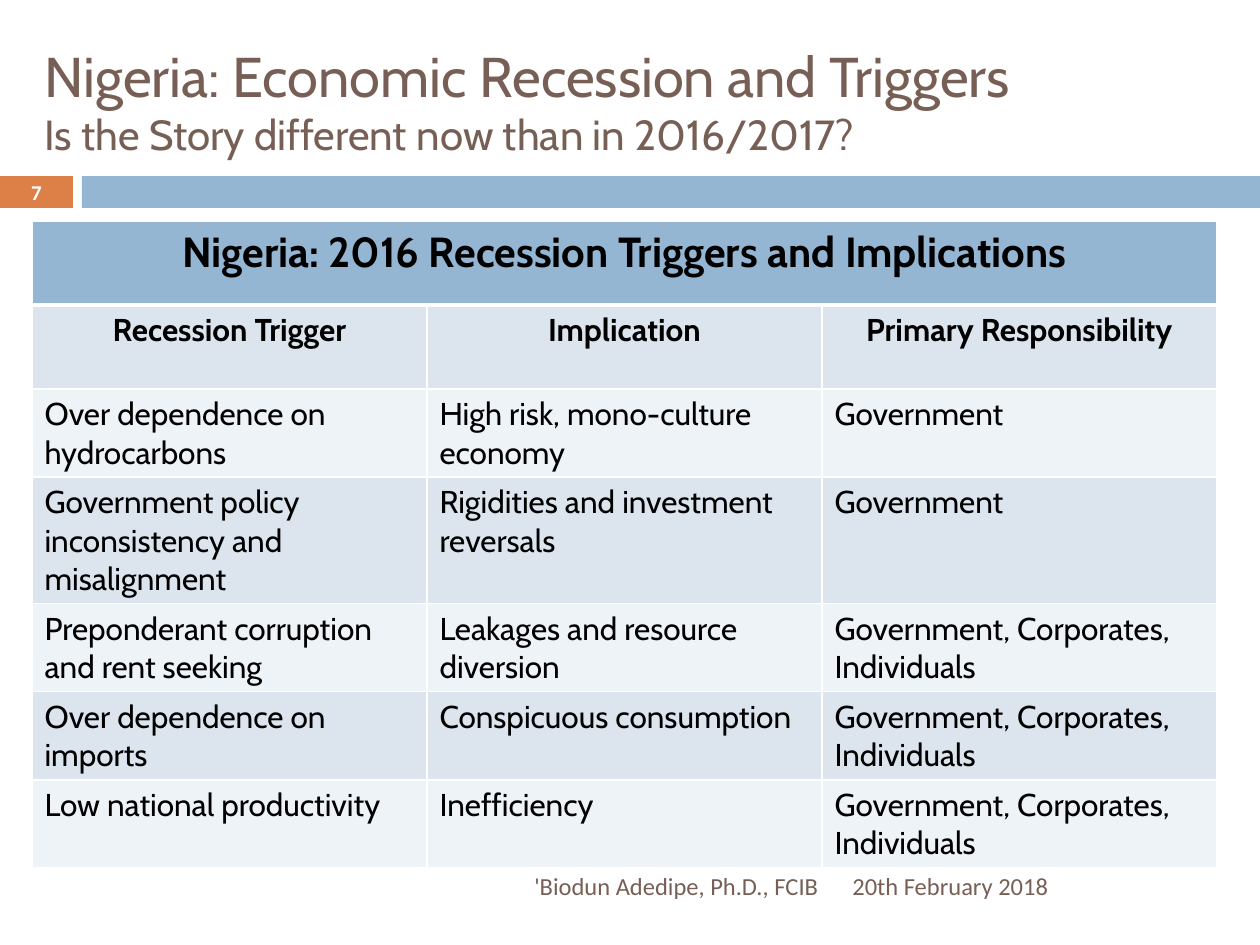
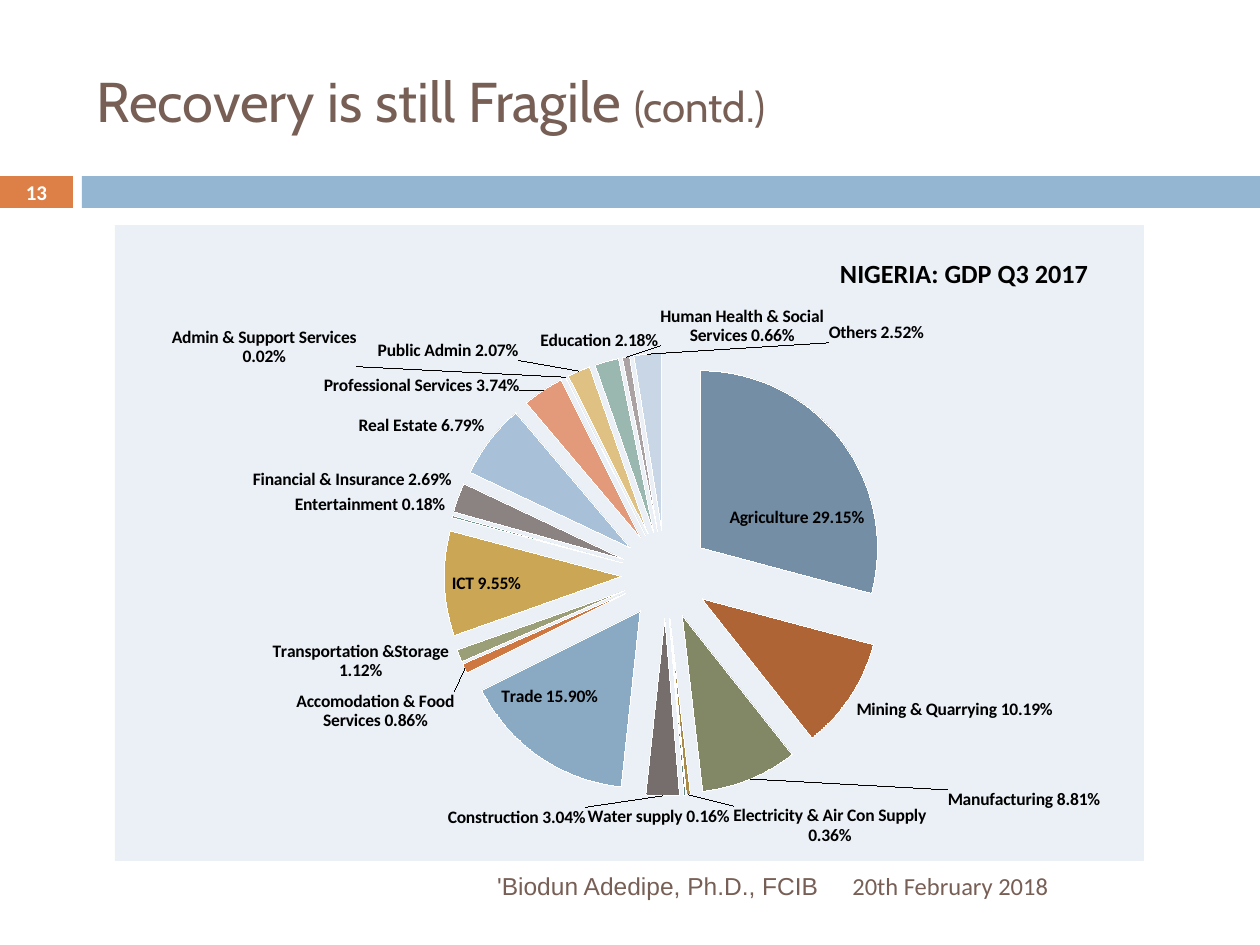
from pptx import Presentation
from pptx.chart.data import CategoryChartData
from pptx.dml.color import RGBColor
from pptx.enum.chart import XL_CHART_TYPE
from pptx.enum.shapes import MSO_SHAPE
from pptx.enum.text import MSO_ANCHOR, PP_ALIGN
from pptx.oxml import parse_xml
from pptx.util import Emu, Pt

PIE = XL_CHART_TYPE.PIE
RECT = MSO_SHAPE.RECTANGLE
MIDDLE = MSO_ANCHOR.MIDDLE
LEFT, CENTER, RIGHT = PP_ALIGN.LEFT, PP_ALIGN.CENTER, PP_ALIGN.RIGHT
A_NS = 'xmlns:a="http://schemas.openxmlformats.org/drawingml/2006/main"'
C_NS = 'xmlns:c="http://schemas.openxmlformats.org/drawingml/2006/chart"'
SCALE = 914400 / 126

HEX = {
    "brown": "775F55", "orange": "DD8047", "blue": "94B6D2",
    "white": "FFFFFF", "black": "000000",
    "dark": "DCE5EE", "light": "EEF3F7", "panel": "EAF0F6",
}
RGB = {name: RGBColor.from_string(code) for name, code in HEX.items()}


def px(*sizes):
    return [Emu(round(size * SCALE)) for size in sizes]


def write(slide, box, lines, face, color, align=LEFT, bold=False):
    frame = slide.shapes.add_textbox(*px(*box)).text_frame
    frame.word_wrap = True
    frame.vertical_anchor = MIDDLE
    para = frame.paragraphs[0]
    para.alignment = align
    for text, size in lines:
        if text == "\n":
            para.add_line_break()
            continue
        run = para.add_run()
        run.text = text
        run.font.size = Pt(size)
        run.font.name = face
        run.font.bold = bold
        run.font.color.rgb = RGB[color]


deck = Presentation()
deck.slide_width, deck.slide_height = px(1260, 945)

PAGES = [
    ("7", (32, 32, 1124, 136), "Calibri", [
        ("Nigeria: Economic Recession and Triggers", 32),
        ("\n", 0),
        ("Is the Story different now than in 2016/2017?", 24),
    ]),
    ("13", (84, 53, 1124, 94), "Arial", [
        ("Recovery is still Fragile ", 32),
        ("(contd.)", 24),
    ]),
]
slides = []
for number, box, face, title in PAGES:
    slide = deck.slides.add_slide(deck.slide_layouts[6])
    slides.append(slide)
    for left, width, color in [(0, 73, "orange"), (82, 1178, "blue")]:
        band = slide.shapes.add_shape(RECT, *px(left, 176, width, 32))
        band.shadow.inherit = False
        band.fill.solid()
        band.fill.fore_color.rgb = RGB[color]
        band.line.fill.background()
    write(slide, box, title, "Cabin", "brown")
    write(slide, (84, 861, 747, 50), [("'Biodun Adedipe, Ph.D., FCIB", 14)],
          face, "brown", RIGHT)
    write(slide, (840, 861, 368, 50), [("20th February 2018", 14)],
          "Calibri", "brown")
    write(slide, (0, 175, 73, 34), [(number, 12)],
          "Calibri", "white", CENTER, True)

BOTH = "Government, Corporates, Individuals"
ROWS = [
    ("Nigeria: 2016 Recession Triggers and Implications", "", ""),
    ("Recession Trigger", "Implication", "Primary Responsibility"),
    ("Over dependence on hydrocarbons", "High risk, mono-culture economy",
     "Government"),
    ("Government policy inconsistency and misalignment",
     "Rigidities and investment reversals", "Government"),
    ("Preponderant corruption and rent seeking",
     "Leakages and resource diversion", BOTH),
    ("Over dependence on imports", "Conspicuous consumption", BOTH),
    ("Low national productivity", "Inefficiency", BOTH),
]
grid = slides[0].shapes.add_table(
    len(ROWS), 3, *px(32, 221, 1185, 84 * len(ROWS))).table
for col in grid.columns:
    col.width = px(395)[0]
grid.cell(0, 0).merge(grid.cell(0, 2))
for r, row in enumerate(ROWS):
    grid.rows[r].height = px(84)[0]
    for c, text in enumerate(row):
        cell = grid.cell(r, c)
        props = cell._tc.get_or_add_tcPr()
        for side in "LRTB":
            thick = (r, side) in [(0, "B"), (1, "T")]
            props.append(parse_xml(
                f'<a:ln{side} {A_NS} w="{38100 if thick else 12700}">'
                f'<a:solidFill><a:srgbClr val="{HEX["white"]}"/></a:solidFill>'
                f'</a:ln{side}>'))
        cell.fill.solid()
        shade = "blue" if r == 0 else "dark" if r % 2 else "light"
        cell.fill.fore_color.rgb = RGB[shade]
        cell.text = text
        para = cell.text_frame.paragraphs[0]
        para.alignment = CENTER if r < 2 else LEFT
        for run in para.runs:
            run.font.name = "Cabin"
            run.font.size = Pt(18 if r else 24)
            run.font.bold = r < 2
            run.font.color.rgb = RGB["black"]

WIDE, HIGH = 1029, 636
SECTORS = [
    ("Agriculture", 29.15, "748EA5", (29, 63)),
    ("Mining & Quarrying", 10.19, "AF6436", (0, 0)),
    ("Manufacturing", 8.81, "828765", (195, 4)),
    ("Electricity & Air Con Supply", 0.36, "AA8B47", (44, 4)),
    ("Water supply", 0.16, "60837B", (-98, 4)),
    ("Construction", 3.04, "766D6D", (-146, 4)),
    ("Trade", 15.9, "8AAAC4", (-42, -44)),
    ("Accomodation & Food Services", 0.86, "CF7741", (-4, 20)),
    ("Transportation &Storage", 1.12, "9A9F78", (-4, -17)),
    ("ICT", 9.55, "CAA655", (0, 0)),
    ("Entertainment", 0.18, "729C92", (0, 0)),
    ("Financial & Insurance", 2.69, "8B8282", (0, -6)),
    ("Real Estate", 6.79, "A8C1D9", (0, 0)),
    ("Professional Services", 3.74, "E39A7A", (-20, 11)),
    ("Admin & Support Services", 0.02, "B5BA98", (-206, -4)),
    ("Public Admin", 2.07, "DFC184", (-58, -4)),
    ("Education", 2.18, "9AB8B0", (53, -4)),
    ("Human Health & Social Services", 0.66, "ABA3A3", (199, -4)),
    ("Others", 2.52, "C9D6E5", (229, -4)),
]
INSIDE = ["Agriculture", "Trade", "ICT"]
data = CategoryChartData()
data.categories = [sector[0] for sector in SECTORS]
data.add_series("Series 1", [sector[1] for sector in SECTORS])
chart = slides[1].shapes.add_chart(
    PIE, *px(115, 225, WIDE, HIGH), data).chart
chart.has_legend = False
chart.font.name = "Calibri"
chart.font.size = Pt(10)
chart.font.color.rgb = RGB["black"]
chart.has_title = True
head = chart.chart_title.text_frame
head.text = "NIGERIA: GDP Q3 2017"
font = head.paragraphs[0].runs[0].font
font.name, font.size, font.bold = "Calibri", Pt(15), True
font.color.rgb = RGB["black"]

plot = chart.plots[0]
plot.vary_by_categories = True
series = plot.series[0]
for i, sector in enumerate(SECTORS):
    style = series.points[i].format
    style.fill.solid()
    style.fill.fore_color.rgb = RGBColor.from_string(sector[2])
    style.line.color.rgb = RGB["white"]

STYLE = (
    '<c:numFmt formatCode="0.00%" sourceLinked="0"/>'
    '<c:spPr><a:noFill/><a:ln><a:noFill/></a:ln></c:spPr>'
    '<c:txPr><a:bodyPr/><a:p><a:pPr><a:defRPr sz="1000" b="1"><a:solidFill>'
    f'<a:srgbClr val="{HEX["black"]}"/></a:solidFill>'
    '<a:latin typeface="Calibri"/></a:defRPr></a:pPr></a:p></c:txPr>')
SHOW = (
    '<c:showLegendKey val="0"/><c:showVal val="0"/><c:showCatName val="1"/>'
    '<c:showSerName val="0"/><c:showPercent val="1"/>'
    '<c:showBubbleSize val="0"/><c:separator> </c:separator>')
tags = ""
for i, (name, value, color, (dx, dy)) in enumerate(SECTORS):
    spot = "inEnd" if name in INSIDE else "outEnd"
    shift = (f'<c:manualLayout><c:x val="{dx / WIDE:.4f}"/>'
             f'<c:y val="{dy / HIGH:.4f}"/></c:manualLayout>')
    tags += (f'<c:dLbl><c:idx val="{i}"/>'
             f'<c:layout>{shift if dx or dy else ""}</c:layout>'
             f'{STYLE}<c:dLblPos val="{spot}"/>{SHOW}</c:dLbl>')
ser = series._element
ser.find("{*}cat").addprevious(parse_xml(
    f'<c:dLbls {C_NS} {A_NS}>{tags}{STYLE}<c:dLblPos val="outEnd"/>{SHOW}'
    '<c:showLeaderLines val="1"/></c:dLbls>'))
ser.find("{*}dPt").addprevious(parse_xml(f'<c:explosion {C_NS} val="25"/>'))

space = chart._chartSpace
area = space.chart.plotArea
for old in area.findall("{*}layout"):
    area.remove(old)
area.insert(0, parse_xml(
    f'<c:layout {C_NS}><c:manualLayout><c:layoutTarget val="inner"/>'
    '<c:xMode val="edge"/><c:yMode val="edge"/><c:x val="0.32"/>'
    '<c:y val="0.2"/><c:w val="0.43"/><c:h val="0.7"/>'
    '</c:manualLayout></c:layout>'))
label = chart.chart_title._element
for old in label.findall("{*}layout"):
    label.remove(old)
label.find("{*}tx").addnext(parse_xml(
    f'<c:layout {C_NS}><c:manualLayout><c:xMode val="edge"/>'
    '<c:yMode val="edge"/><c:x val="0.7"/><c:y val="0.04"/>'
    '</c:manualLayout></c:layout>'))
space.chart.addnext(parse_xml(
    f'<c:spPr {C_NS} {A_NS}><a:solidFill><a:srgbClr val="{HEX["panel"]}"/>'
    '</a:solidFill><a:ln><a:noFill/></a:ln></c:spPr>'))

deck.save("out.pptx")
